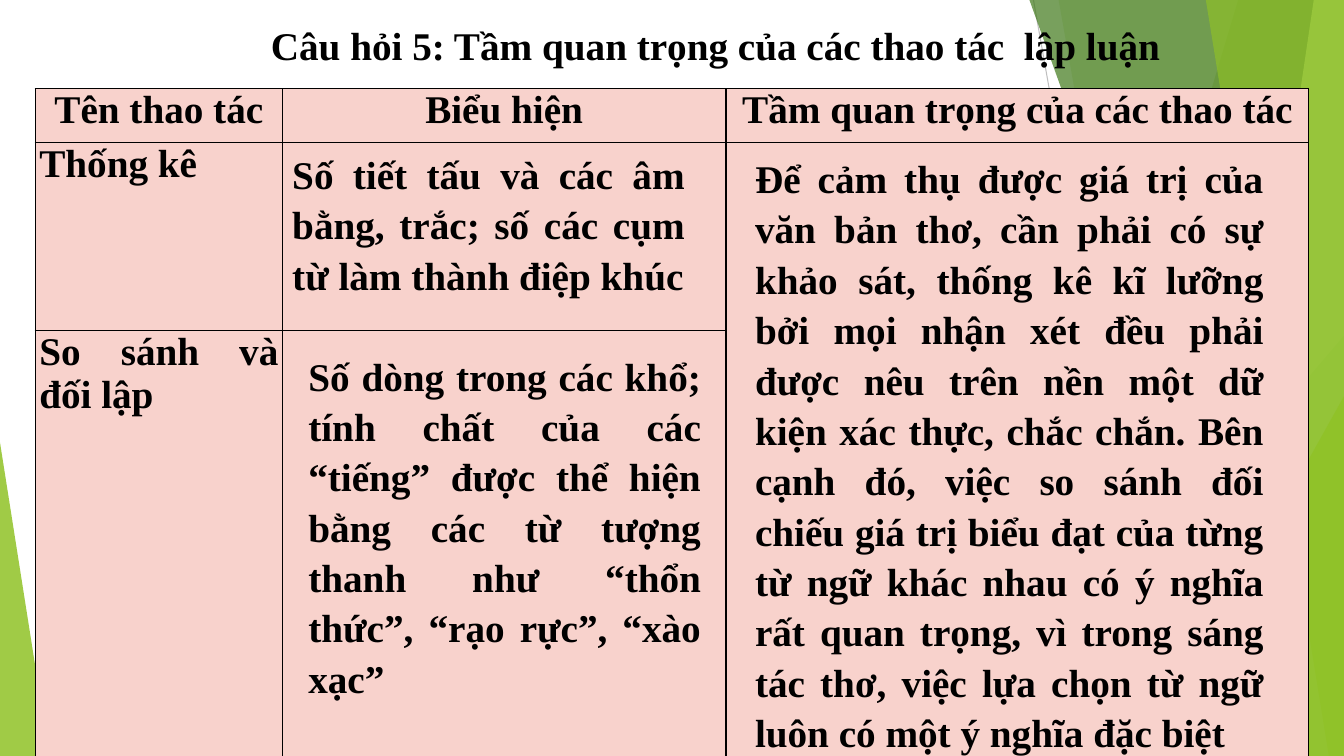
from pptx import Presentation
from pptx.dml.color import RGBColor as RGB
from pptx.enum.shapes import MSO_CONNECTOR as CONN, MSO_SHAPE as SHAPE
from pptx.enum.text import MSO_ANCHOR as ANCHOR, PP_ALIGN as ALIGN
from pptx.oxml.ns import qn
from pptx.util import Inches, Pt
from lxml.etree import SubElement, Element

# Content
TITLE = "Câu hỏi 5: Tầm quan trọng của các thao tác  lập luận"
ROWS = [
    ["Tên thao tác", "Biểu hiện", "Tầm quan trọng của các thao tác"],
    ["Thống kê", "", ""],
    ["So sánh và đối lập", "", ""],
]
NOTES = [  # left, top, width, height, text
    (2.8, 1.41, 4.09, 1.99,
     "Số tiết tấu và các âm bằng, trắc; số các cụm từ làm thành điệp khúc"),
    (2.96, 3.41, 4.09, 3.4,
     "Số dòng trong các khổ; tính chất của các “tiếng” được thể hiện bằng "
     "các từ tượng thanh như “thổn thức”, “rạo rực”, “xào xạc”"),
    (7.39, 1.45, 5.24, 5.76,
     "Để cảm thụ được giá trị của văn bản thơ, cần phải có sự khảo sát, "
     "thống kê kĩ lưỡng bởi mọi nhận xét đều phải được nêu trên nền một dữ "
     "kiện xác thực, chắc chắn. Bên cạnh đó, việc so sánh đối chiếu giá trị "
     "biểu đạt của từng từ ngữ khác nhau có ý nghĩa rất quan trọng, vì trong "
     "sáng tác thơ, việc lựa chọn từ ngữ luôn có một ý nghĩa đặc biệt"),
]

# Theme and layout
THEME = {
    "font": {"name": "Times New Roman", "size": Pt(28), "bold": True},
    "ink": "000000", "cell": "F8D2CC",
    "lime": "90C226", "green": "54A021", "dark": "3F7819", "pale": "C0E474",
    "gray": "BFBFBF", "mist": "D9D9D9",
    "rule": 0.75, "edge": 1, "space": 1.07,
}
WIDE, HIGH = 13.33, 7.5
COLS = [2.45, 4.4, 5.78]
TALL = [0.53, 1.87, 4.23]
RAYS = [  # start, end, colour
    ((10.25, 0), (11.58, HIGH), "gray"),
    ((WIDE, 4.03), (8.12, HIGH), "mist"),
]
DECOR = [  # panel: top x, foot x; wedge: left, top, width, tip; colour, opacity
    ("panel", (12.28, 10.04), "lime", 30),
    ("panel", (10.5, 11.83), "lime", 20),
    ("wedge", (9.77, 3.33, 3.56, 1), "green", 72),
    ("panel", (10.21, 12.91), "dark", 70),
    ("panel", (13.03, 11.92), "pale", 70),
    ("panel", (11.96, 13.18), "lime", 65),
    ("wedge", (11.34, 3.93, 1.99, 1), "lime", 80),
    ("wedge", (0, 4.39, 0.49, 0), "lime", 85),
]


def tone(name):
    return RGB.from_string(THEME[name])


def apply(item, vals):
    for key, val in vals.items():
        setattr(item, key, val)


def write(frame, text, align, space=None):
    para = frame.paragraphs[0]
    apply(para, {"alignment": align, "line_spacing": space})
    run = para.add_run()
    run.text = text
    apply(run.font, THEME["font"])
    run.font.color.rgb = tone("ink")


def paint(shape, name, alpha):
    shape.shadow.inherit = False
    shape.fill.solid()
    shape.fill.fore_color.rgb = tone(name)
    shape.line.fill.background()
    color = next(shape.element.spPr.iter(qn("a:srgbClr")))
    SubElement(color, qn("a:alpha"), val=str(alpha * 1000))


def panel(shapes, top, foot):
    pts = [(top, 0), (WIDE, 0), (WIDE, HIGH), (foot, HIGH)]
    pts = [(Inches(x), Inches(y)) for x, y in pts]
    form = shapes.build_freeform(*pts[0])
    form.add_line_segments(pts[1:], close=True)
    return form.convert_to_shape()


def wedge(shapes, left, top, width, tip):
    box = [Inches(v) for v in (left, top, width, HIGH - top)]
    shape = shapes.add_shape(SHAPE.ISOSCELES_TRIANGLE, *box)
    shape.adjustments[0] = tip
    return shape


def border(cell):
    props = cell._tc.get_or_add_tcPr()
    for spot, side in enumerate(("lnL", "lnR", "lnT", "lnB")):
        line = Element(qn("a:" + side), w=str(Pt(THEME["edge"])))
        fill = SubElement(line, qn("a:solidFill"))
        SubElement(fill, qn("a:srgbClr"), val=THEME["ink"])
        props.insert(spot, line)


def main():
    prs = Presentation()
    apply(prs, {"slide_width": Inches(WIDE), "slide_height": Inches(HIGH)})
    slide = prs.slides.add_slide(prs.slide_layouts[5])
    shapes = slide.shapes

    # Backdrop
    for start, end, name in RAYS:
        ends = [Inches(v) for v in start + end]
        ray = shapes.add_connector(CONN.STRAIGHT, *ends)
        ray.line.color.rgb = tone(name)
        ray.line.width = Pt(THEME["rule"])
        SubElement(ray.element.spPr, qn("a:effectLst"))
    makers = {"panel": panel, "wedge": wedge}
    for kind, dims, name, alpha in DECOR:
        paint(makers[kind](shapes, *dims), name, alpha)

    # Title, lifted above the backdrop
    title = shapes.title
    apply(title, {"left": Inches(2.5), "top": Inches(0.13),
                  "width": Inches(9.19), "height": Inches(0.57)})
    apply(title.text_frame, {"word_wrap": True, "vertical_anchor": ANCHOR.TOP})
    write(title.text_frame, TITLE, ALIGN.CENTER, THEME["space"])
    shapes.element.append(title.element)

    # Table
    grid = shapes.add_table(len(TALL), len(COLS), Inches(0.35), Inches(0.88),
                            Inches(sum(COLS)), Inches(sum(TALL))).table
    apply(grid, {"first_row": False, "horz_banding": False})
    for col, width in zip(grid.columns, COLS):
        col.width = Inches(width)
    for row, height in zip(grid.rows, TALL):
        row.height = Inches(height)
    for r, texts in enumerate(ROWS):
        for c, text in enumerate(texts):
            cell = grid.cell(r, c)
            apply(cell, {"margin_left": Inches(0.04), "margin_top": 0,
                         "margin_right": Inches(0.04), "margin_bottom": 0})
            cell.fill.solid()
            cell.fill.fore_color.rgb = tone("cell")
            border(cell)
            if text:
                write(cell.text_frame, text,
                      ALIGN.JUSTIFY if r else ALIGN.CENTER)
    grid.cell(1, 2).merge(grid.cell(2, 2))

    # Passages over the table
    for *dims, text in NOTES:
        box = shapes.add_textbox(*[Inches(v) for v in dims])
        box.text_frame.word_wrap = True
        write(box.text_frame, text, ALIGN.JUSTIFY, THEME["space"])

    prs.save("out.pptx")


if __name__ == "__main__":
    main()
